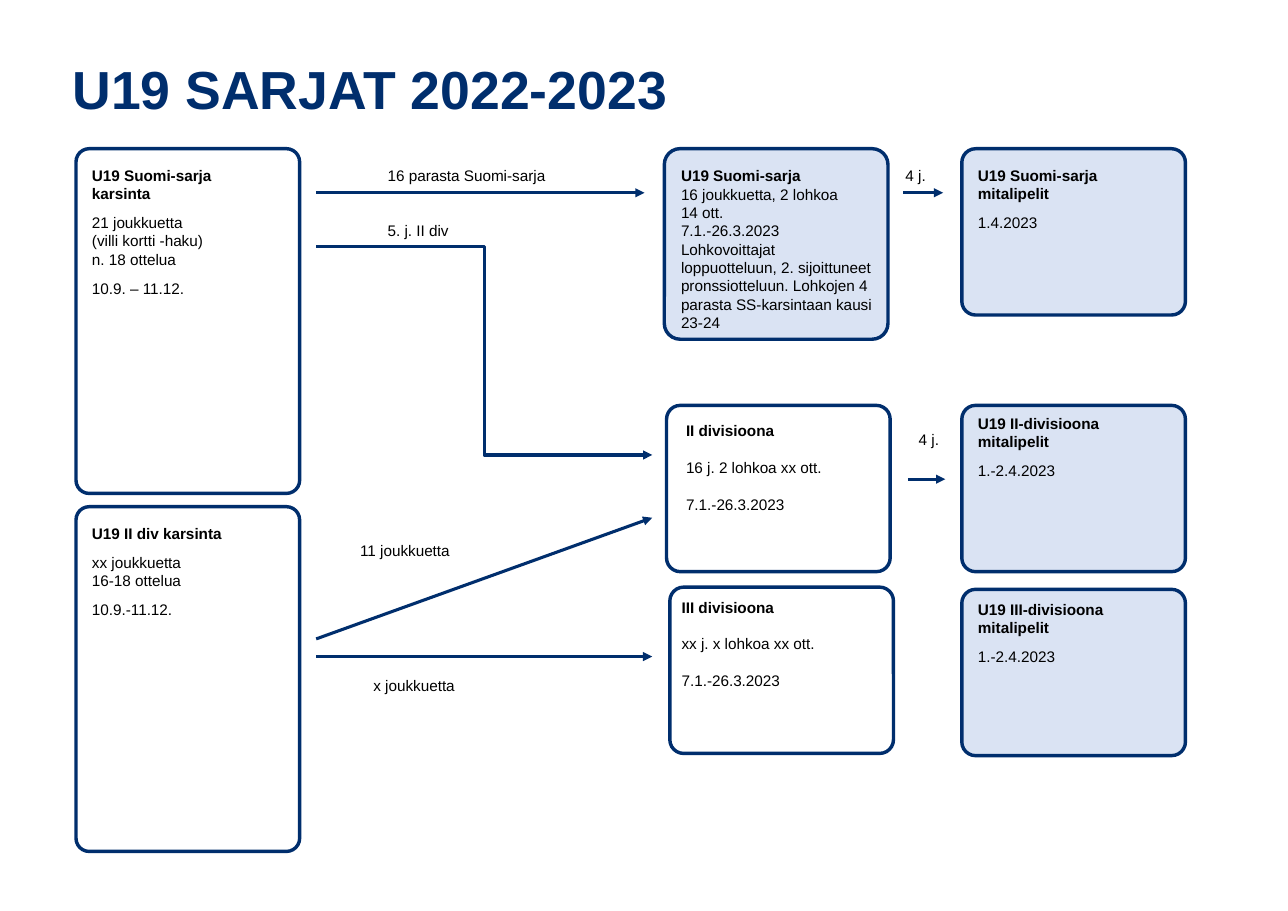
from lxml.etree import SubElement
from pptx import Presentation
from pptx.dml.color import RGBColor
from pptx.enum.shapes import MSO_CONNECTOR as Link, MSO_SHAPE as Preset
from pptx.enum.text import MSO_ANCHOR as Anchor, PP_ALIGN as Align
from pptx.oxml.ns import qn
from pptx.util import Pt

PX = 9144
NAVY = RGBColor(0x00, 0x2E, 0x6D)
PALE_BLUE = RGBColor(0xDA, 0xE3, 0xF3)
BLACK = RGBColor(0x00, 0x00, 0x00)

CARD_WIDTH = 203
STAGE_LEFT, MEDAL_LEFT = 69, 873
STAGE_HEIGHT, CARD_HEIGHT = 313, 151
FLOW_START, FLOW_END = 287, 592


def px(*lengths):
    return [length * PX for length in lengths]


def style(paragraph, size=10, color=BLACK, bold=False):
    font = paragraph.font
    font.name = "Arial"
    font.size = Pt(size)
    font.bold = bold
    font.color.rgb = color
    paragraph.alignment = Align.LEFT


def label(slide, text, left, top, width, height=57, **look):
    frame = slide.shapes.add_textbox(*px(left, top, width, height)).text_frame
    frame.word_wrap = True
    frame.text = text
    style(frame.paragraphs[0], **look)


def card(slide, left, top, height, heading, blocks, fill=None, corner=0.083,
         gap=7, insets=(11, 12, 20)):
    box = slide.shapes.add_shape(
        Preset.ROUNDED_RECTANGLE, *px(left, top, CARD_WIDTH, height))
    box.adjustments[0] = corner
    box.shadow.inherit = False
    box.line.color.rgb = NAVY
    box.line.width = Pt(2.25)
    if fill is None:
        box.fill.background()
    else:
        box.fill.solid()
        box.fill.fore_color.rgb = fill

    frame = box.text_frame
    frame.word_wrap = True
    frame.vertical_anchor = Anchor.TOP
    frame.margin_left, frame.margin_top, frame.margin_right = px(*insets)
    frame.margin_bottom = 0
    lines = [(text, True, 0) for text in heading]
    for block in blocks:
        lines += [(text, False, 0 if i else gap) for i, text in enumerate(block)]
    frame.text = "\n".join(text for text, _, _ in lines)
    for paragraph, (_, bold, space) in zip(frame.paragraphs, lines):
        style(paragraph, bold=bold)
        paragraph.line_spacing = Pt(12)
        paragraph.space_before = Pt(space)


def arrow(slide, x1, y1, x2, y2, kind=Link.STRAIGHT):
    flow = slide.shapes.add_connector(kind, *px(x1, y1, x2, y2))
    flow.line.color.rgb = NAVY
    flow.line.width = Pt(2)
    SubElement(flow.line._get_or_add_ln(), qn("a:tailEnd"), type="triangle")
    SubElement(flow._element.spPr, qn("a:effectLst"))


def add_qualifiers(slide):
    stages = [
        (135, ["U19 Suomi-sarja karsinta"],
         [["21 joukkuetta", "(villi kortti -haku)", "n. 18 ottelua"],
          ["10.9. – 11.12."]]),
        (460, ["U19 II div karsinta"],
         [["xx joukkuetta", "16-18 ottelua"], ["10.9.-11.12."]]),
    ]
    for top, heading, blocks in stages:
        card(slide, STAGE_LEFT, top, STAGE_HEIGHT, heading, blocks, corner=0.059)


def add_leagues(slide):
    card(slide, 603, 135, 173, ["U19 Suomi-sarja"],
         [["16 joukkuetta, 2 lohkoa", "14 ott.", "7.1.-26.3.2023",
           "Lohkovoittajat loppuotteluun, 2. sijoittuneet pronssiotteluun. "
           "Lohkojen 4 parasta SS-karsintaan kausi 23-24"]],
         fill=PALE_BLUE, gap=0, insets=(11, 12, 10))
    divisions = [
        (605, 368, "II divisioona", "16 j. 2 lohkoa xx ott.", (14, 11, 10)),
        (608, 533, "III divisioona", "xx j. x lohkoa xx ott.", (7, 6, 10)),
    ]
    for left, top, name, size, insets in divisions:
        card(slide, left, top, CARD_HEIGHT, [name],
             [[size], ["7.1.-26.3.2023"]], gap=12, insets=insets)


def add_medal_games(slide):
    finals = [
        (135, "U19 Suomi-sarja", "1.4.2023", 12),
        (368, "U19 II-divisioona", "1.-2.4.2023", 4),
        (535, "U19 III-divisioona", "1.-2.4.2023", 6),
    ]
    for top, league, date, inset in finals:
        card(slide, MEDAL_LEFT, top, CARD_HEIGHT, [league, "mitalipelit"],
             [[date]], fill=PALE_BLUE, insets=(11, inset, 20))


def add_flows(slide):
    arrow(slide, FLOW_START, 175, 585, 175)
    arrow(slide, FLOW_START, 224, FLOW_END, 413, Link.ELBOW)
    arrow(slide, FLOW_START, 580, FLOW_END, 470)
    arrow(slide, FLOW_START, 596, FLOW_END, 596)
    arrow(slide, 820, 175, 856, 175)
    arrow(slide, 824, 435, 858, 435)
    for text, left, top, width in [
        ("16 parasta Suomi-sarja", 342, 146, 224),
        ("5. j. II div", 342, 196, 224),
        ("11 joukkuetta", 317, 486, 181),
        ("x joukkuetta", 329, 609, 181),
        ("4 j.", 812, 146, 49),
        ("4 j.", 824, 386, 49),
    ]:
        label(slide, text, left, top, width)


def main():
    deck = Presentation()
    deck.slide_width, deck.slide_height = px(1169, 827)
    slide = deck.slides.add_slide(deck.slide_layouts[6])
    label(slide, "U19 SARJAT 2022-2023", 56, 46, 964, 69,
          size=35, color=NAVY, bold=True)
    add_qualifiers(slide)
    add_leagues(slide)
    add_medal_games(slide)
    add_flows(slide)
    deck.save("out.pptx")


if __name__ == "__main__":
    main()
